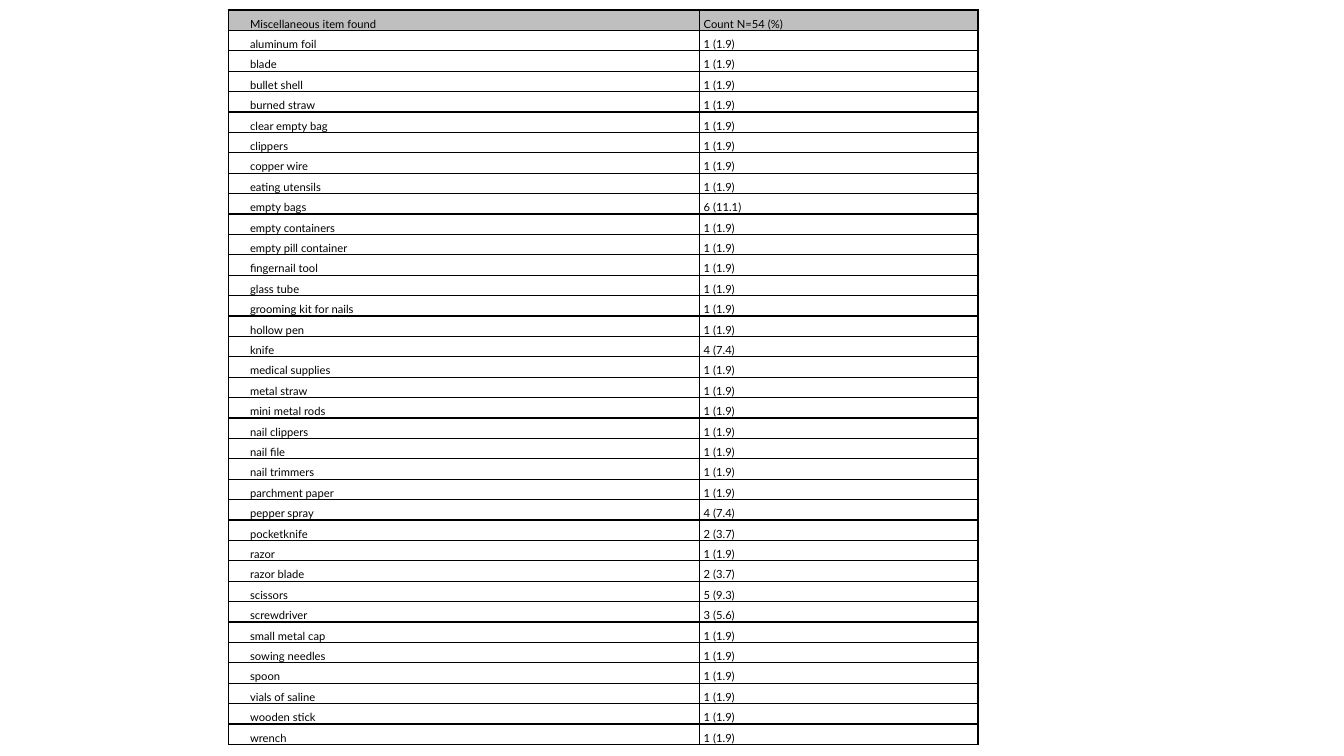
from lxml.etree import SubElement
from pptx import Presentation
from pptx.dml.color import RGBColor
from pptx.enum.text import MSO_ANCHOR
from pptx.oxml.ns import qn
from pptx.util import Inches, Pt

COUNTS = {
    "aluminum foil": 1, "blade": 1, "bullet shell": 1, "burned straw": 1,
    "clear empty bag": 1, "clippers": 1, "copper wire": 1,
    "eating utensils": 1, "empty bags": 6, "empty containers": 1,
    "empty pill container": 1, "fingernail tool": 1, "glass tube": 1,
    "grooming kit for nails": 1, "hollow pen": 1, "knife": 4,
    "medical supplies": 1, "metal straw": 1, "mini metal rods": 1,
    "nail clippers": 1, "nail file": 1, "nail trimmers": 1,
    "parchment paper": 1, "pepper spray": 4, "pocketknife": 2, "razor": 1,
    "razor blade": 2, "scissors": 5, "screwdriver": 3, "small metal cap": 1,
    "sowing needles": 1, "spoon": 1, "vials of saline": 1,
    "wooden stick": 1, "wrench": 1,
}
TOTAL = sum(COUNTS.values())


def color(hex_string):
    return RGBColor.from_string(hex_string)


def write_cell(cell, text, size=8, font="Lato", ink="000000", indent=0, fill=None):
    cell.margin_left = cell.margin_right = Inches(0.04)
    cell.margin_top = cell.margin_bottom = 0
    cell.vertical_anchor = MSO_ANCHOR.BOTTOM
    p = cell.text_frame.paragraphs[0]
    p.line_spacing = 1.15
    pPr = p._p.get_or_add_pPr()
    pPr.set("marL", "0")
    pPr.set("indent", str(Inches(indent)))
    r = p.add_run()
    r.text = text
    r.font.size, r.font.name = Pt(size), font
    r.font.color.rgb = color(ink)

    # Borders come before the fill in the cell properties
    tcPr = cell._tc.get_or_add_tcPr()
    for side in ("a:lnL", "a:lnR", "a:lnT", "a:lnB"):
        ln = SubElement(tcPr, qn(side), w=str(Pt(1)))
        SubElement(SubElement(ln, qn("a:solidFill")), qn("a:srgbClr"), val="000000")
    if fill:
        cell.fill.solid()
        cell.fill.fore_color.rgb = color(fill)
    else:
        cell.fill.background()


prs = Presentation()
prs.slide_width, prs.slide_height = Inches(13.33), Inches(7.5)
s = prs.slides.add_slide(prs.slide_layouts[6])

# Header and one row per item, with its share of the total
rows = [("Miscellaneous item found", f"Count N={TOTAL} (%)")]
rows += [(item, f"{n} ({n / TOTAL:.1%})".replace("%", "")) for item, n in COUNTS.items()]

# Table frame
table = s.shapes.add_table(len(rows), 2, Inches(2.27), Inches(0.1),
                           Inches(7.43), Inches(7.29)).table
table.first_row = table.horz_banding = False
for column, width in zip(table.columns, (4.67, 2.76)):
    column.width = Inches(width)

# Cells
for i, (item, count) in enumerate(rows):
    table.rows[i].height = Inches(7.29 / len(rows))
    fill = "BFBFBF" if i == 0 else None
    write_cell(table.cell(i, 0), item, indent=0.17, fill=fill)
    write_cell(table.cell(i, 1), count, fill=fill)

prs.save("out.pptx")
